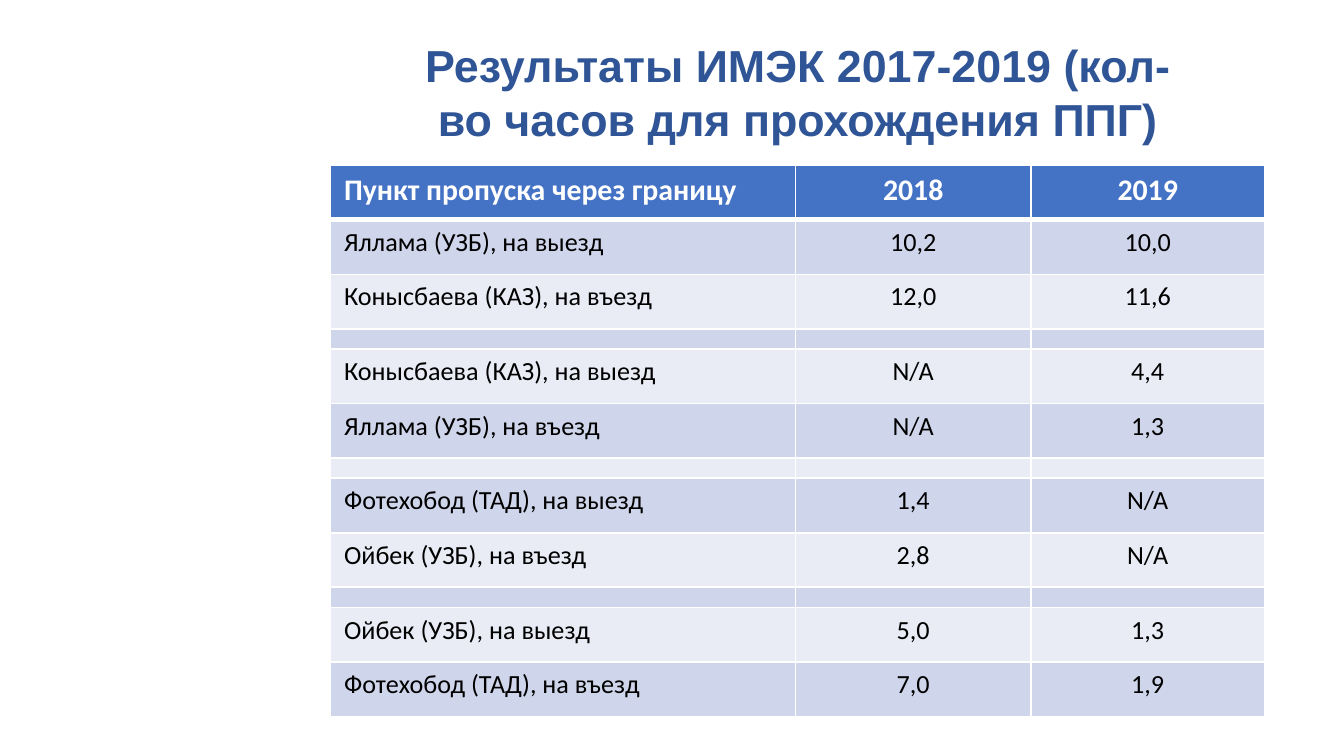
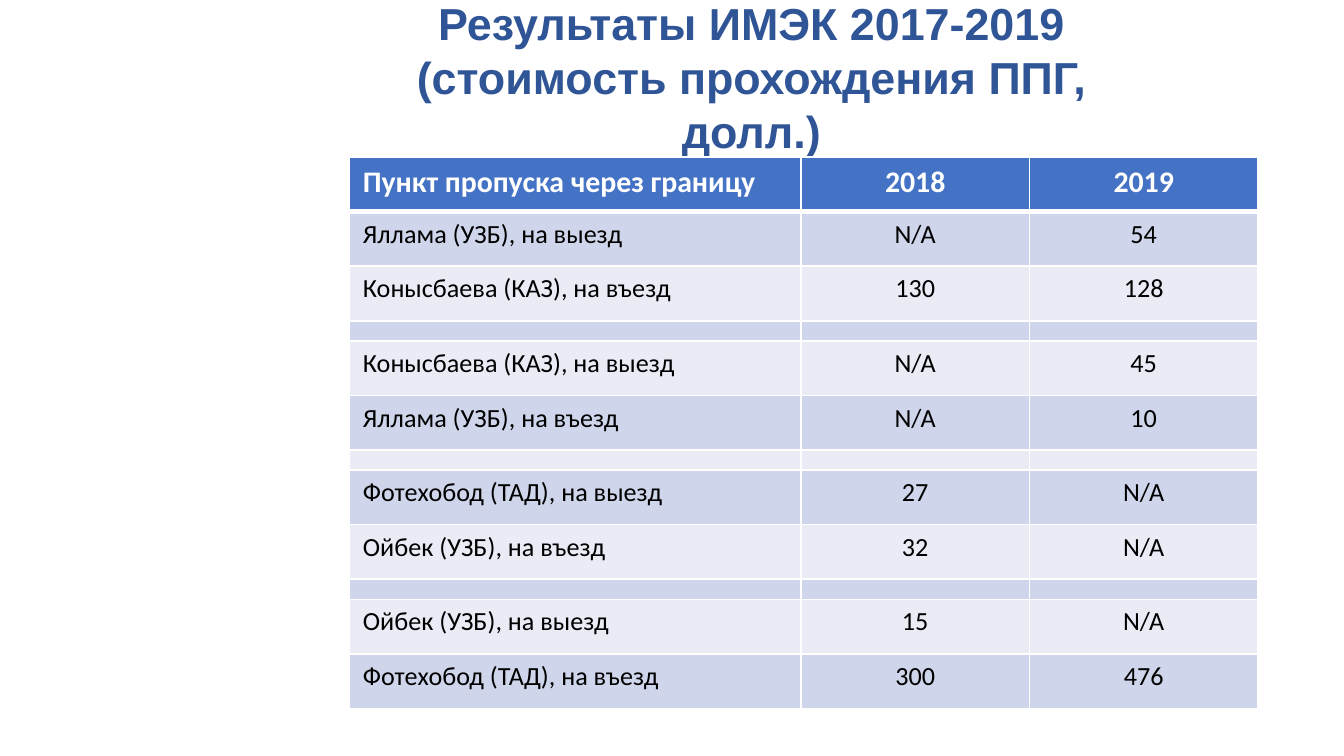
from lxml import etree
from pptx import Presentation
from pptx import util as u
from pptx.dml.color import RGBColor
from pptx.enum import text
from pptx.oxml import ns

COLORS = {"title": "2F5597", "header": "4472C4", "odd": "CFD5EA", "even": "E9EBF5",
          "white": "FFFFFF", "black": "000000"}
HEADER = ("Пункт пропуска через границу", "2018", "2019")
CROSSINGS = (
    "Яллама (УЗБ), на выезд", "Конысбаева (КАЗ), на въезд",
    "Конысбаева (КАЗ), на выезд", "Яллама (УЗБ), на въезд",
    "Фотехобод (ТАД), на выезд", "Ойбек (УЗБ), на въезд",
    "Ойбек (УЗБ), на выезд", "Фотехобод (ТАД), на въезд",
)
HOURS = (("10,2", "10,0"), ("12,0", "11,6"), ("N/A", "4,4"), ("N/A", "1,3"),
         ("1,4", "N/A"), ("2,8", "N/A"), ("5,0", "1,3"), ("7,0", "1,9"))
COSTS = (("N/A", "54"), ("130", "128"), ("N/A", "45"), ("N/A", "10"),
         ("27", "N/A"), ("32", "N/A"), ("15", "N/A"), ("300", "476"))
ROW_H, GAP_H = u.Inches(7.3 / 18), u.Inches(0.15)


def rgb(name):
    """Return the named colour."""
    return RGBColor.from_string(COLORS[name])


def add_run(p, words, font, size, color, bold):
    """Add one formatted run to a paragraph."""
    r = p.add_run()
    r.text = words
    r.font.name, r.font.size, r.font.bold = font, u.Pt(size), bold
    r.font.color.rgb = rgb(color)


def add_title(s, box, words):
    """Place the centred slide title in its box."""
    tf = s.shapes.add_textbox(*map(u.Inches, box)).text_frame
    tf.word_wrap = True
    tf.vertical_anchor = text.MSO_ANCHOR.MIDDLE
    p = tf.paragraphs[0]
    p.alignment = text.PP_ALIGN.CENTER
    add_run(p, words, "Arial", 24, "title", True)


def set_borders(cell, top, bottom):
    """Draw white cell borders with the given top and bottom widths."""
    tc_pr = cell._tc.get_or_add_tcPr()
    for i, (side, width) in enumerate((("L", 1), ("R", 1), ("T", top), ("B", bottom))):
        ln = etree.Element(ns.qn(f"a:ln{side}"), w=str(u.Pt(width)))
        fill = etree.SubElement(ln, ns.qn("a:solidFill"))
        etree.SubElement(fill, ns.qn("a:srgbClr"), val=COLORS["white"])
        tc_pr.insert(i, ln)


def fill_cell(cell, words, row, col):
    """Style one table cell and write its words."""
    head = row == 0
    cell.fill.solid()
    cell.fill.fore_color.rgb = rgb("header" if head else "odd" if row % 2 else "even")
    set_borders(cell, 3 if row == 1 else 1, 3 if head else 1)
    p = cell.text_frame.paragraphs[0]
    if words:
        p.alignment = text.PP_ALIGN.CENTER if col else text.PP_ALIGN.LEFT
        add_run(p, words, "Calibri", 16 if head else 14, "white" if head else "black", head)
    else:
        p._p.get_or_add_endParaRPr().set("sz", "300")


def add_results(s, left, top, widths, values):
    """Place the crossings table, with a thin row between pairs."""
    rows = [HEADER]
    for i, (name, pair) in enumerate(zip(CROSSINGS, values)):
        if i and i % 2 == 0:
            rows.append(("", "", ""))
        rows.append((name, *pair))
    heights = [ROW_H if row[0] else GAP_H for row in rows]
    box = map(u.Inches, (left, top, sum(widths)))
    tbl = s.shapes.add_table(len(rows), len(HEADER), *box, sum(heights)).table
    for col, width in zip(tbl.columns, widths):
        col.width = u.Inches(width)
    for i, (row, height) in enumerate(zip(rows, heights)):
        tbl.rows[i].height = height
        for j, words in enumerate(row):
            fill_cell(tbl.cell(i, j), words, i, j)


def add_slide(prs, title, title_box, table_box, values):
    """Add one results slide."""
    s = prs.slides.add_slide(prs.slide_layouts[6])
    add_title(s, title_box, title)
    add_results(s, *table_box, values)


def main():
    """Build and save the presentation."""
    prs = Presentation()
    prs.slide_width, prs.slide_height = u.Inches(10), u.Inches(10 * 9 / 16)
    add_slide(prs, "Результаты ИМЭК 2017-2019 (кол-во часов для прохождения ППГ)",
              (2.98, 0.25, 5.91, 0.86), (2.46, 1.23, (3.46, 1.75, 1.74)), HOURS)
    add_slide(prs, "Результаты ИМЭК 2017-2019 (стоимость прохождения ППГ, долл.)",
              (2.74, 0.14, 5.7, 0.86), (2.6, 1.17, (3.36, 1.7, 1.7)), COSTS)
    prs.save("out.pptx")


if __name__ == "__main__":
    main()
